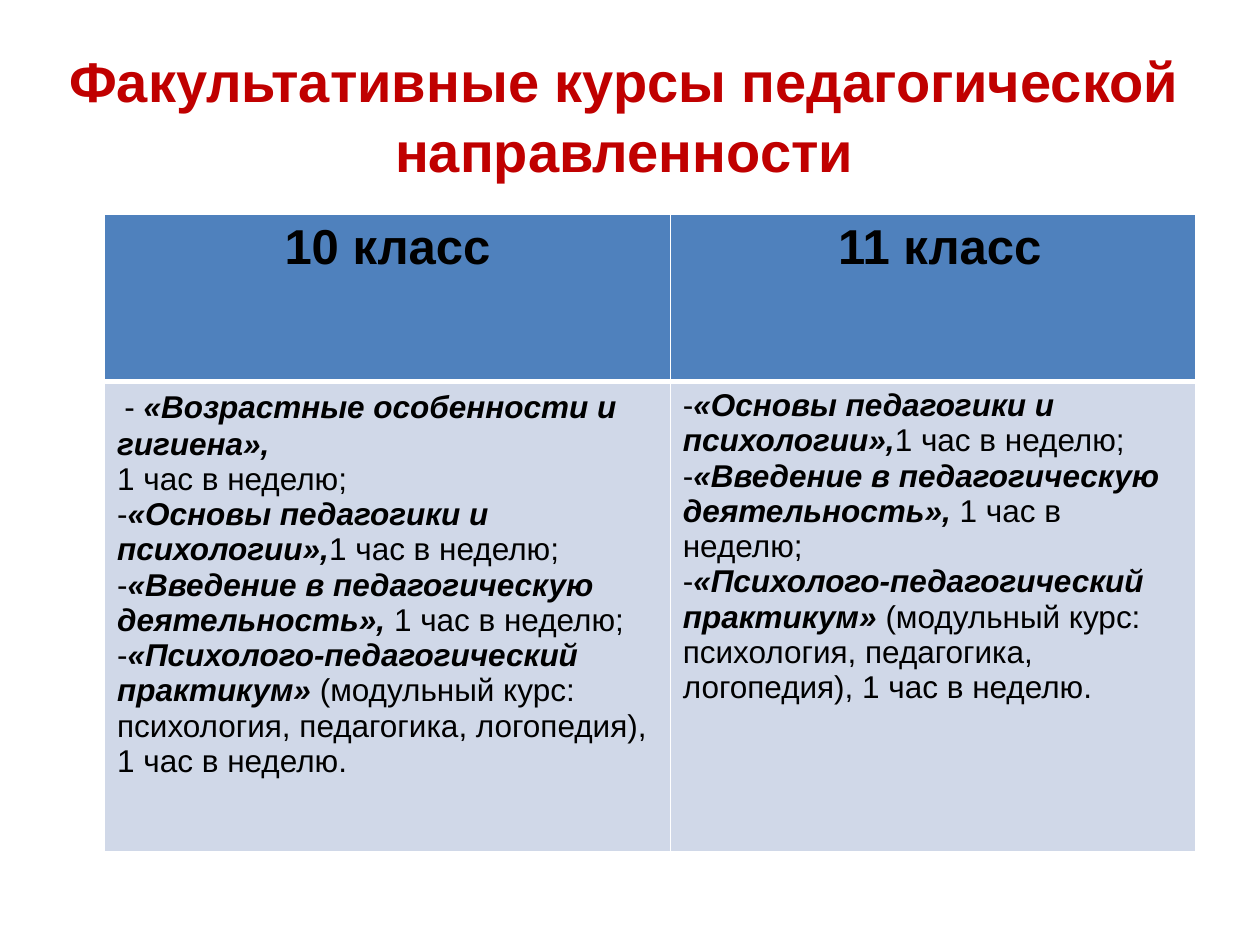
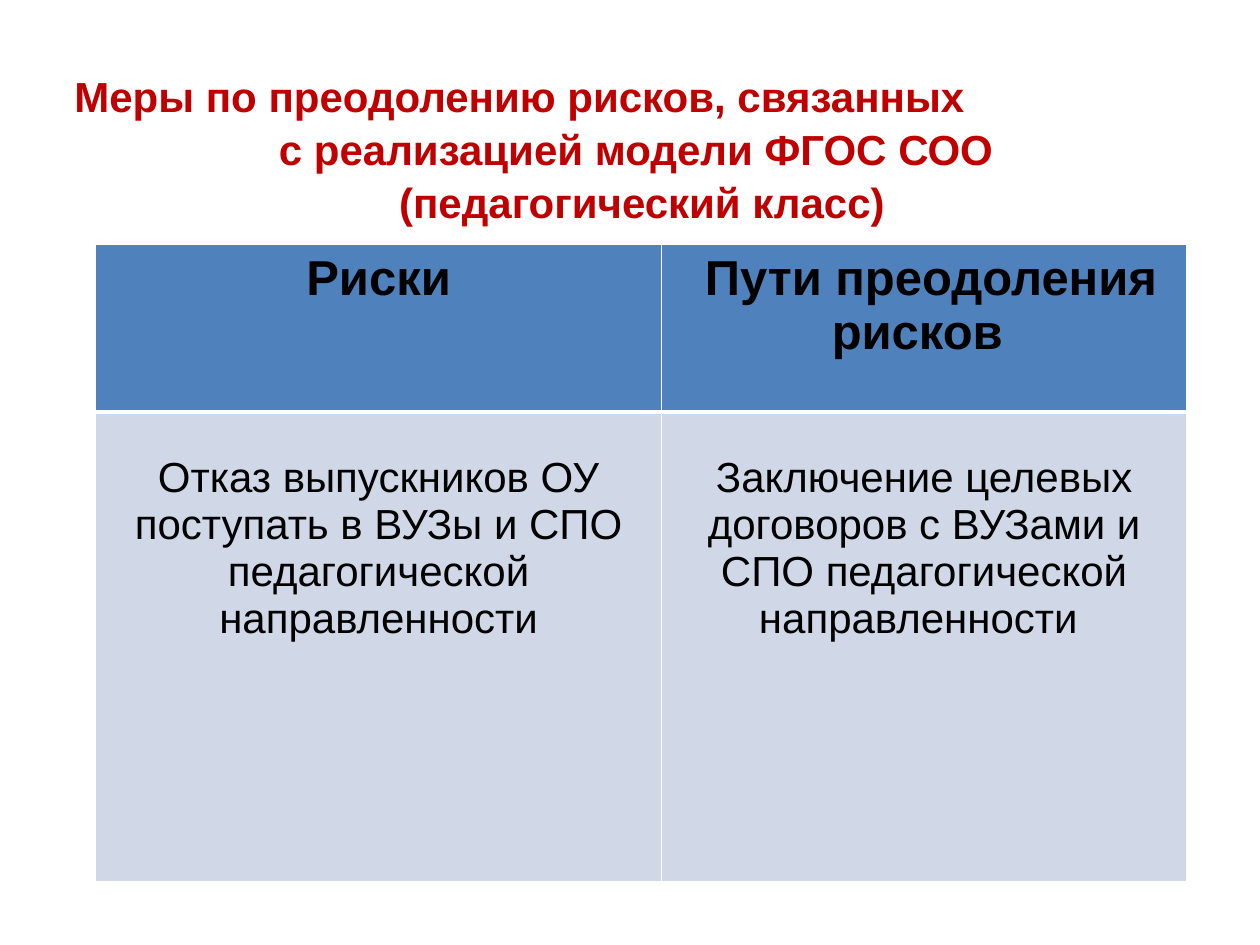
"""Builds two slides on pedagogical classes, each a red title over a two-column table."""
from lxml import etree
from pptx import Presentation
from pptx.dml.color import RGBColor
from pptx.enum.text import MSO_ANCHOR, MSO_AUTO_SIZE, PP_ALIGN
from pptx.oxml.ns import qn
from pptx.util import Inches, Pt

LEFT, CENTER = PP_ALIGN.LEFT, PP_ALIGN.CENTER
TOP = MSO_ANCHOR.TOP
NO_AUTOFIT = MSO_AUTO_SIZE.NONE

RED = RGBColor(0xC0, 0x00, 0x00)
BLACK = RGBColor(0x00, 0x00, 0x00)
WHITE = RGBColor(0xFF, 0xFF, 0xFF)
HEADER_BLUE = RGBColor(0x4F, 0x81, 0xBD)
BODY_BLUE = RGBColor(0xD0, 0xD8, 0xE8)

FONT = "Arial"
COLUMN_WIDTHS = (4.49, 4.17)
ROW_HEIGHTS = (1.33, 3.73)
HEADER_SIZE = 28
CELL_MARGIN_TOP = 0.05

HOUR = "1 час в неделю;"
SHARED_COURSES = [
    ("«Основы педагогики и психологии»,", HOUR),
    ("«Введение в педагогическую деятельность», ", HOUR),
    ("«Психолого-педагогический практикум» ",
     "(модульный курс: психология, педагогика, логопедия), 1 час в неделю."),
]

COURSES = {
    "title": [("Факультативные курсы педагогической направленности", CENTER)],
    "title_box": (0.35, 0.29, 9.21, 1.18),
    "title_size": 32,
    "table_at": (0.83, 1.7),
    "headers": ("10 класс", " 11 класс"),
}
RISKS = {
    "title": [
        ("Меры по преодолению рисков, связанных", LEFT),
        ("с реализацией модели ФГОС СОО ", CENTER),
        ("(педагогический класс)", CENTER),
    ],
    "title_box": (0.49, 0.49, 9.21, 1.31),
    "title_size": 24,
    "table_at": (0.76, 1.94),
    "headers": ("Риски", " Пути преодоления рисков "),
}
RISK_ROW = (
    "Отказ выпускников ОУ поступать в ВУЗы и СПО педагогической направленности",
    "Заключение целевых договоров с ВУЗами и СПО педагогической направленности ",
)


def add_run(paragraph, text, size, color=BLACK, bold=False, italic=False, font=FONT):
    run = paragraph.add_run()
    run.text = text
    run.font.name = font
    run.font.size = Pt(size)
    run.font.bold = bold
    run.font.italic = italic
    run.font.color.rgb = color


def next_paragraph(frame):
    first = frame.paragraphs[0]
    return frame.add_paragraph() if first.runs else first


def add_dash_bullet(paragraph):
    properties = paragraph._p.get_or_add_pPr()
    properties.set("marL", "0")
    properties.set("indent", "0")
    etree.SubElement(properties, qn("a:buFont"), typeface=FONT)
    etree.SubElement(properties, qn("a:buChar"), char="-")


def style_cell(cell, fill, top_width, bottom_width):
    properties = cell._tc.get_or_add_tcPr()
    for side, width in (("L", 1), ("R", 1), ("T", top_width), ("B", bottom_width)):
        line = etree.SubElement(properties, qn(f"a:ln{side}"), w=str(Pt(width)))
        solid = etree.SubElement(line, qn("a:solidFill"))
        etree.SubElement(solid, qn("a:srgbClr"), val=str(WHITE))
    cell.fill.solid()
    cell.fill.fore_color.rgb = fill
    cell.margin_top = Inches(CELL_MARGIN_TOP)


def add_title(slide, content):
    title = slide.shapes.title
    title.left, title.top, title.width, title.height = map(Inches, content["title_box"])
    frame = title.text_frame
    frame.word_wrap = True
    frame.auto_size = NO_AUTOFIT
    frame.vertical_anchor = TOP
    for text, alignment in content["title"]:
        paragraph = next_paragraph(frame)
        paragraph.alignment = alignment
        paragraph.line_spacing = 1.05
        add_run(paragraph, text, content["title_size"], RED, bold=True)


def add_table_slide(deck, content):
    slide = deck.slides.add_slide(deck.slide_layouts[5])
    add_title(slide, content)
    left, top = content["table_at"]
    table = slide.shapes.add_table(
        len(ROW_HEIGHTS), len(COLUMN_WIDTHS), Inches(left), Inches(top),
        Inches(sum(COLUMN_WIDTHS)), Inches(sum(ROW_HEIGHTS))).table
    for row, height in zip(table.rows, ROW_HEIGHTS):
        row.height = Inches(height)
    for index, (width, header) in enumerate(zip(COLUMN_WIDTHS, content["headers"])):
        table.columns[index].width = Inches(width)
        header_cell = table.cell(0, index)
        style_cell(header_cell, HEADER_BLUE, 1, 3)
        paragraph = header_cell.text_frame.paragraphs[0]
        paragraph.alignment = CENTER
        add_run(paragraph, header, HEADER_SIZE, bold=True)
        style_cell(table.cell(1, index), BODY_BLUE, 3, 1)
    return table


def add_courses(frame):
    for name, hours in SHARED_COURSES:
        paragraph = next_paragraph(frame)
        add_dash_bullet(paragraph)
        add_run(paragraph, name, 18, bold=True, italic=True)
        add_run(paragraph, hours, 18)


def build_courses(deck):
    table = add_table_slide(deck, COURSES)
    grade_10, grade_11 = (table.cell(1, index).text_frame for index in range(2))
    opening = grade_10.paragraphs[0]
    add_run(opening, " ", 18, font="Calibri")
    add_run(opening, "- ", 18)
    add_run(opening, "«Возрастные особенности и гигиена»,", 18, bold=True, italic=True)
    add_run(next_paragraph(grade_10), HOUR, 18)
    for frame in (grade_10, grade_11):
        add_courses(frame)


def build_risks(deck):
    table = add_table_slide(deck, RISKS)
    for index, text in enumerate(RISK_ROW):
        cell = table.cell(1, index)
        cell.margin_top = Inches(0.34)
        paragraph = cell.text_frame.paragraphs[0]
        paragraph.alignment = CENTER
        add_run(paragraph, text, 24)


def main():
    deck = Presentation()
    deck.slide_width, deck.slide_height = Inches(10), Inches(7.5)
    build_courses(deck)
    build_risks(deck)
    deck.save("out.pptx")


if __name__ == "__main__":
    main()
